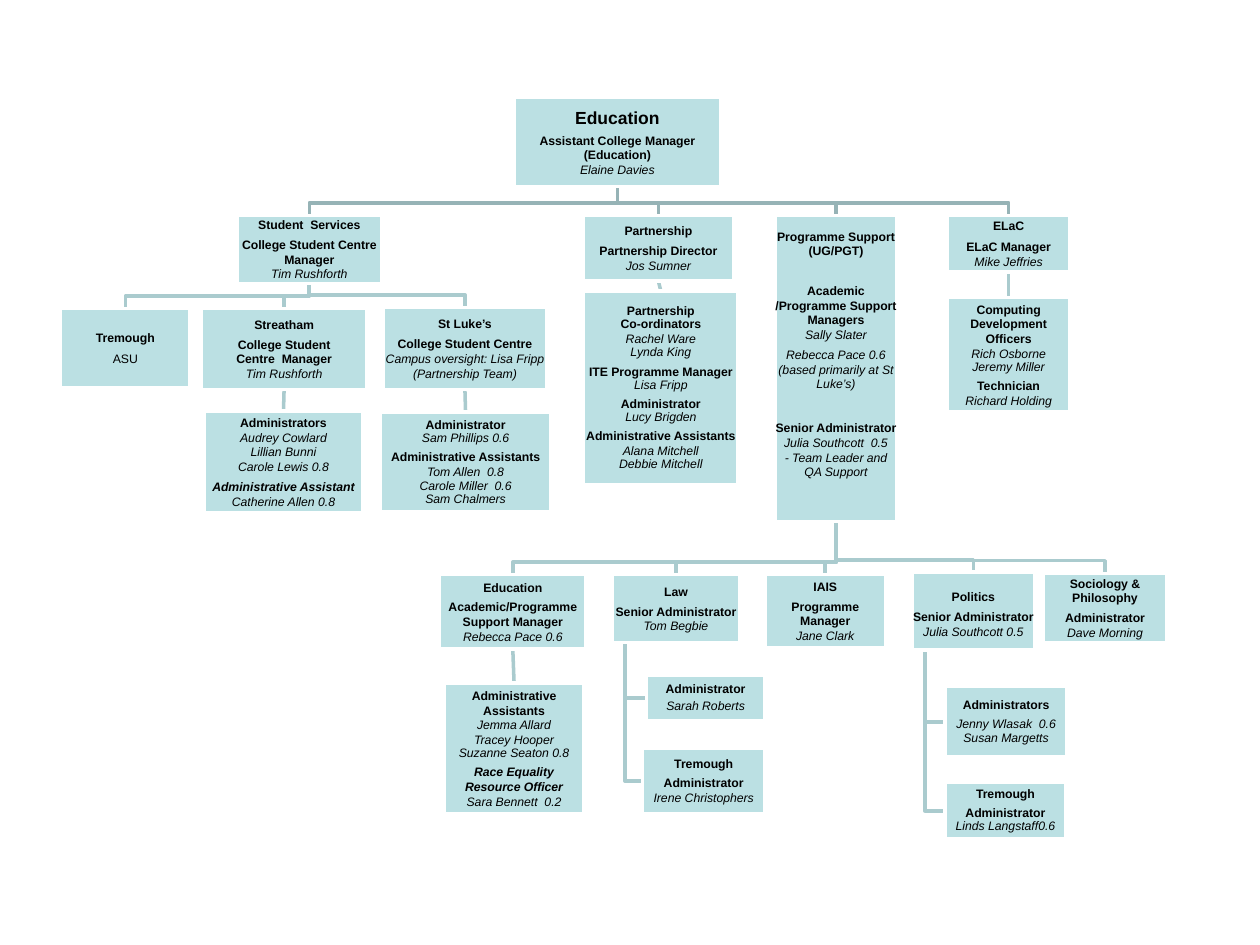
from dataclasses import dataclass
from typing import Optional

from pptx import Presentation
from pptx.dml.color import RGBColor
from pptx.enum import shapes as es, text as et
from pptx.oxml.ns import qn
from pptx.util import Inches, Pt
from lxml import etree

FILL, EDGE, INK = "BBE0E3", "FFFFFF", "000000"
DARK, LIGHT = "96B3B6", "AACBCE"
BLANK = 6


@dataclass
class Line:
    text: str
    bold: bool = False
    ital: bool = False
    after: float = 0
    space: Optional[float] = None
    before: float = 0
    size: float = 7


@dataclass
class Box:
    left: float
    top: float
    width: float
    height: float
    lines: list[Line]
    pad_top: float = 0
    pad_low: float = 0

    @property
    def mid(self) -> float:
        return self.left + self.width / 2

    @property
    def low(self) -> float:
        return self.top + self.height


def role(text: str, after: float = 0, **more) -> Line:
    return Line(text, bold=True, after=after, **more)


def name(text: str, after: float = 0, **more) -> Line:
    return Line(text, ital=True, after=after, **more)


def tint(code: str) -> RGBColor:
    return RGBColor.from_string(code)


# Last line of a group: closer spacing, then a small gap
END = {"after": 2.5, "space": 0.9}

BOXES = {
    # Head of the college team
    "head": Box(4.08, 0.77, 1.64, 0.71, [
        role("Education", 3, size=10), role("Assistant College Manager (Education)"),
        name("Elaine Davies")]),
    # Four service areas
    "student": Box(1.88, 1.71, 1.15, 0.54, [
        role("Student  Services", 3), role("College Student Centre Manager"),
        name("Tim Rushforth")]),
    "partner": Box(4.63, 1.71, 1.19, 0.52, [
        role("Partnership", 3), role("Partnership Director"), name("Jos Sumner")]),
    "support": Box(6.15, 1.71, 0.97, 2.43, [
        role("Programme Support"), role("(UG/PGT)", 3),
        role("Academic /Programme Support Managers", before=11.3),
        name("Sally Slater", 3), name("Rebecca Pace 0.6"),
        name("(based primarily at St Luke’s)"),
        role("Senior Administrator", before=16.6), name("Julia Southcott  0.5"),
        name("- Team Leader and QA Support")], pad_low=0.23),
    "elac": Box(7.52, 1.71, 0.97, 0.45, [
        role("ELaC", 3.5), role("ELaC Manager"), name("Mike Jeffries")]),
    # Student centres
    "tremough": Box(0.48, 2.45, 1.03, 0.63, [role("Tremough", 3.5), Line("ASU")]),
    "streatham": Box(1.6, 2.45, 1.31, 0.64, [
        role("Streatham", 3), role("College Student"), role("Centre  Manager"),
        name("Tim Rushforth")]),
    "luke": Box(3.04, 2.44, 1.3, 0.65, [
        role("St Luke’s", 3), role("College Student Centre"),
        name("Campus oversight: Lisa Fripp (Partnership Team)")]),
    # Staff below the centres and areas
    "streatham staff": Box(1.62, 3.26, 1.26, 0.81, [
        role("Administrators"), name("Audrey Cowlard"), name("Lillian Bunni"),
        name("Carole Lewis 0.8", 3), role("Administrative Assistant", ital=True),
        name("Catherine Allen 0.8")]),
    "luke staff": Box(3.02, 3.27, 1.35, 0.79, [
        role("Administrator"), name("Sam Phillips 0.6", **END),
        role("Administrative Assistants"), name("Tom Allen  0.8"),
        name("Carole Miller  0.6"), name("Sam Chalmers", **END)]),
    "partner staff": Box(4.63, 2.31, 1.23, 1.54, [
        role("Partnership", space=0.9), role("Co-ordinators", space=0.9),
        name("Rachel Ware"), name("Lynda King", **END),
        role("ITE Programme Manager"), name("Lisa Fripp", **END),
        role("Administrator"), name("Lucy Brigden", **END),
        role("Administrative Assistants"), name("Alana Mitchell"),
        name("Debbie Mitchell", **END)]),
    "elac staff": Box(7.52, 2.36, 0.97, 0.91, [
        role("Computing Development Officers"), name("Rich Osborne"),
        name("Jeremy Miller", **END), role("Technician"), name("Richard Holding")]),
    # Programme teams
    "education": Box(3.49, 4.56, 1.16, 0.59, [
        role("Education", 3), role("Academic/Programme"), role("Support Manager"),
        name("Rebecca Pace 0.6")]),
    "law": Box(4.86, 4.56, 1.01, 0.54, [
        role("Law", 3), role("Senior Administrator"), name("Tom Begbie")]),
    "iais": Box(6.07, 4.56, 0.96, 0.58, [
        role("IAIS", 3), role("Programme Manager"), name("Jane Clark")]),
    "politics": Box(7.24, 4.54, 0.97, 0.62, [
        role("Politics", 3), role("Senior Administrator"),
        name("Julia Southcott 0.5")], pad_top=0.05),
    "sociology": Box(8.28, 4.55, 0.98, 0.55, [
        role("Sociology &"), role("Philosophy", 3), role("Administrator"),
        name("Dave Morning")]),
    # Staff below the programme teams
    "education staff": Box(3.53, 5.42, 1.1, 1.04, [
        role("Administrative Assistants"), name("Jemma Allard"), name("Tracey Hooper"),
        name("Suzanne Seaton 0.8", **END),
        role("Race Equality Resource Officer", ital=True), name("Sara Bennett  0.2")]),
    "law staff": Box(5.13, 5.36, 0.94, 0.36, [
        role("Administrator", **END), name("Sarah Roberts", **END)]),
    "law tremough": Box(5.1, 5.94, 0.97, 0.52, [
        role("Tremough", **END), role("Administrator"), name("Irene Christophers")]),
    "politics staff": Box(7.5, 5.45, 0.97, 0.56, [
        role("Administrators", **END), name("Jenny Wlasak  0.6"),
        name("Susan Margetts")]),
    "politics tremough": Box(7.5, 6.21, 0.96, 0.45, [
        role("Tremough", **END), role("Administrator"),
        name("Linds Langstaff0.6", **END)]),
}

# Parent -> children, by kind of link
FORKS = {"support": ["sociology", "politics", "iais", "law", "education"],
         "student": ["luke", "streatham", "tremough"],
         "head": ["elac", "support", "partner", "student"]}
HANGS = {"law": ["law staff", "law tremough"],
         "politics": ["politics staff", "politics tremough"]}
STEMS = ["elac", "partner", "luke", "streatham", "education"]


def draw_box(slide, box: Box):
    shape = slide.shapes.add_shape(
        es.MSO_SHAPE.RECTANGLE,
        *map(Inches, (box.left, box.top, box.width, box.height)))
    shape.shadow.inherit = False
    shape.fill.solid()
    shape.fill.fore_color.rgb = tint(FILL)
    shape.line.color.rgb = tint(EDGE)
    shape.line.width = Pt(2)
    frame = shape.text_frame
    frame.word_wrap = True
    frame.vertical_anchor = et.MSO_ANCHOR.MIDDLE
    frame.margin_left = frame.margin_right = 0
    frame.margin_top, frame.margin_bottom = Inches(box.pad_top), Inches(box.pad_low)
    frame.text = "\n".join(line.text for line in box.lines)
    for para, line in zip(frame.paragraphs, box.lines):
        para.alignment = et.PP_ALIGN.CENTER
        para.space_before, para.space_after = Pt(line.before), Pt(line.after)
        if line.space:
            para.line_spacing = line.space
        font = para.runs[0].font
        font.name, font.size = "Arial", Pt(line.size)
        font.bold, font.italic = line.bold, line.ital
        font.color.rgb = tint(INK)
    return shape


def finish(link, color: str) -> None:
    """Colour a link and send it behind the boxes."""
    link.line.color.rgb = tint(color)
    link.line.width = Pt(2)
    link.element.getparent().insert(2, link.element)


def draw_bend(slide, points: list[tuple[float, float]], color: str) -> None:
    start, *rest = [(Inches(x), Inches(y)) for x, y in points]
    build = slide.shapes.build_freeform(*start)
    build.add_line_segments(rest, close=False)
    bend = build.convert_to_shape()
    bend.fill.background()
    bend.shadow.inherit = False
    finish(bend, color)


def draw_stem(slide, upper, lower) -> None:
    stem = slide.shapes.add_connector(es.MSO_CONNECTOR.STRAIGHT, 0, 0, 0, 0)
    stem.begin_connect(upper, 2)
    stem.end_connect(lower, 0)
    etree.SubElement(stem.element.spPr, qn("a:effectLst"))
    finish(stem, LIGHT)
    # The outline must come before the effect list
    stem.element.spPr.append(stem.element.spPr.find(qn("a:effectLst")))


def main() -> None:
    deck = Presentation()
    deck.slide_width, deck.slide_height = Inches(10), Inches(7.5)
    slide = deck.slides.add_slide(deck.slide_layouts[BLANK])
    drawn = {key: draw_box(slide, box) for key, box in BOXES.items()}

    # Forks run along a rail just above each child
    for key, kids in FORKS.items():
        top = BOXES[key]
        for kid in map(BOXES.get, kids):
            rail = kid.top - 0.1
            draw_bend(slide, [(top.mid, top.low), (top.mid, rail),
                              (kid.mid, rail), (kid.mid, kid.top)],
                      DARK if key == "head" else LIGHT)
    # Hanging links drop near the left edge and turn to the child's side
    for key, kids in HANGS.items():
        top = BOXES[key]
        x = top.left + 0.1
        for kid in map(BOXES.get, kids):
            y = kid.top + kid.height / 2
            draw_bend(slide, [(x, top.low), (x, y), (kid.left, y)], LIGHT)
    for key in STEMS:
        draw_stem(slide, drawn[key], drawn[f"{key} staff"])
    deck.save("out.pptx")


if __name__ == "__main__":
    main()
